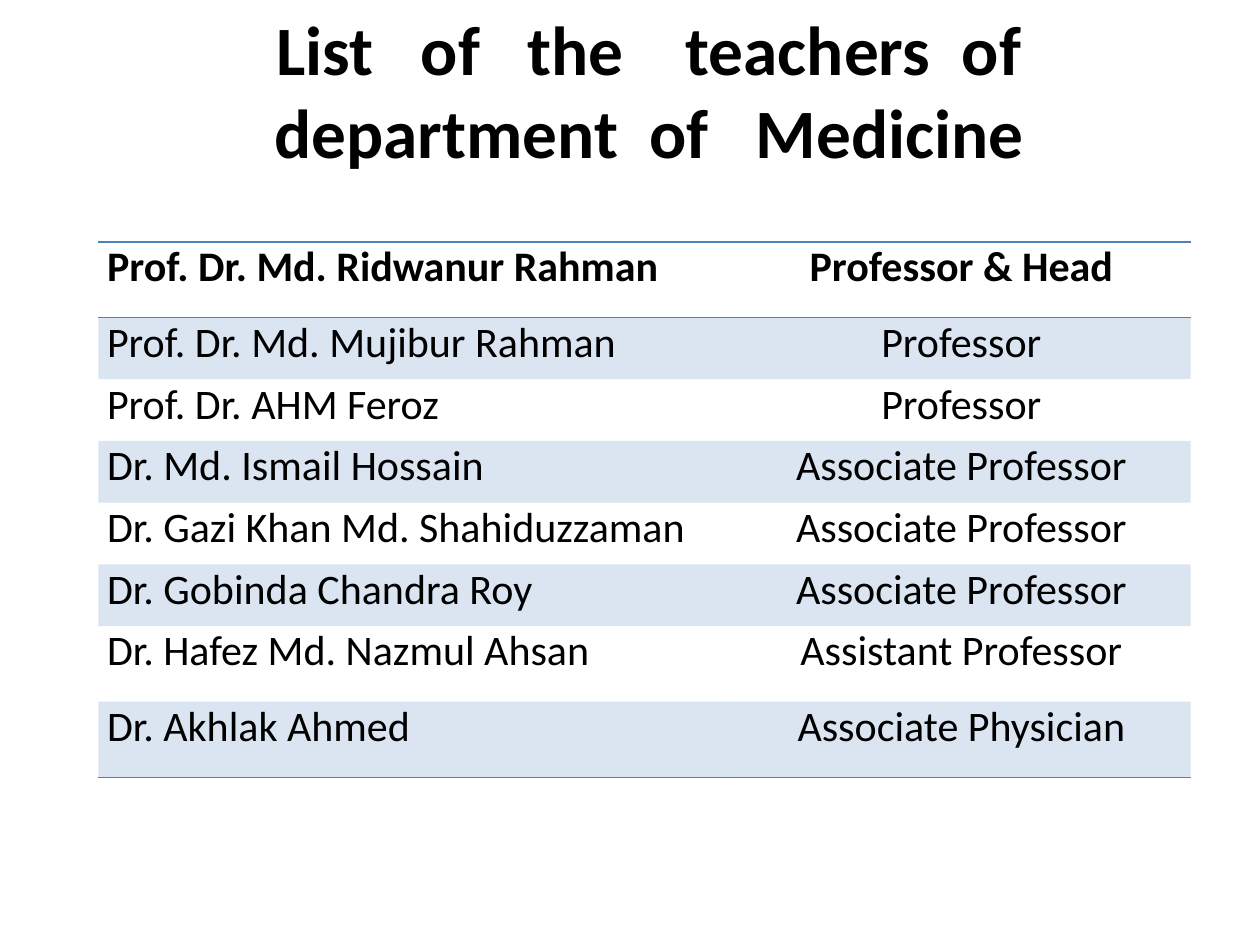
from lxml.etree import SubElement
from pptx import Presentation
from pptx.dml.color import RGBColor
from pptx.enum.text import MSO_ANCHOR, PP_ALIGN
from pptx.oxml import parse_xml
from pptx.oxml.ns import nsdecls, qn
from pptx.util import Inches, Pt

COLORS = {"ink": "000000", "blue": "4F81BD"}
PLAIN_GRID = "{2D5ABB26-0587-4C30-8999-92F81FD0307C}"

# Each title word with the number of space widths after it
TITLE = [("List", 3), ("of", 3), ("the", 4), ("teachers", 2), ("of", 4),
         ("department", 2), ("of", 3), ("Medicine", 0)]

STAFF = [
    ("Prof. Dr. Md. Ridwanur Rahman", "Professor & Head"),
    ("Prof. Dr. Md. Mujibur Rahman", "Professor"),
    ("Prof. Dr. AHM Feroz", "Professor"),
    ("Dr. Md. Ismail Hossain", "Associate Professor"),
    ("Dr. Gazi Khan Md. Shahiduzzaman", "Associate Professor"),
    ("Dr. Gobinda Chandra Roy", "Associate Professor"),
    ("Dr. Hafez Md. Nazmul Ahsan", "Assistant Professor"),
    ("Dr. Akhlak Ahmed", "Associate Physician"),
]
WIDTHS = [5.03, 3.64]
HEIGHTS = [0.6] + [0.49] * 5 + [0.6] * 2


class Deck:
    def __init__(self, slide):
        self.slide = slide
        self.face = "Calibri"

    def style(self, run, size, bold):
        values = {"name": self.face, "size": Pt(size), "bold": bold}
        for key, value in values.items():
            setattr(run.font, key, value)
        run.font.color.rgb = RGBColor.from_string(COLORS["ink"])

    def title(self, words, box, size):
        frame = self.slide.shapes.add_textbox(*map(Inches, box)).text_frame
        frame.word_wrap = True
        frame.vertical_anchor = MSO_ANCHOR.MIDDLE
        para = frame.paragraphs[0]
        para.alignment = PP_ALIGN.CENTER
        space = 0.226 * size  # width of one space in points
        for word, gap in words:
            run = para.add_run()
            run.text = word
            self.style(run, size, True)
            if gap:
                blank = para.add_run()
                blank.text = " "
                self.style(blank, size, True)
                extra = round((gap - 1) * space * 100)
                blank.font._element.set("spc", str(extra))

    def rule(self, cell, sides):
        props = cell._tc.get_or_add_tcPr()
        for index, side in enumerate(sides):
            line = parse_xml(
                f'<a:{side} {nsdecls("a")} w="12700"><a:solidFill>'
                f'<a:srgbClr val="{COLORS["blue"]}"/></a:solidFill></a:{side}>')
            props.insert(index, line)

    def tint(self, cell, percent):
        cell.fill.solid()
        cell.fill.fore_color.rgb = RGBColor.from_string(COLORS["blue"])
        color = cell._tc.tcPr.find(".//" + qn("a:srgbClr"))
        SubElement(color, qn("a:alpha")).set("val", str(percent * 1000))

    def cell(self, cell, text, align, bold):
        values = {"margin_left": 0.07, "margin_right": 0.07,
                  "margin_top": 0, "margin_bottom": 0}
        for key, value in values.items():
            setattr(cell, key, Inches(value))
        para = cell.text_frame.paragraphs[0]
        para.alignment = align
        run = para.add_run()
        run.text = text
        self.style(run, 24, bold)

    def table(self, rows, left, top):
        size = map(Inches, (left, top, sum(WIDTHS), sum(HEIGHTS)))
        grid = self.slide.shapes.add_table(len(rows), len(WIDTHS), *size).table
        grid._tbl.tblPr[0].text = PLAIN_GRID
        grid.horz_banding = False
        for col, width in zip(grid.columns, WIDTHS):
            col.width = Inches(width)
        for row, height in zip(grid.rows, HEIGHTS):
            row.height = Inches(height)

        aligns = (PP_ALIGN.LEFT, PP_ALIGN.CENTER)
        rules = {0: ("lnT", "lnB"), len(rows) - 1: ("lnB",)}
        for r, texts in enumerate(rows):
            for c, text in enumerate(texts):
                cell = grid.cell(r, c)
                self.cell(cell, text, aligns[c], r == 0)
                if r % 2:
                    self.tint(cell, 20)
                else:
                    cell.fill.background()
                self.rule(cell, rules.get(r, ()))


def main():
    prs = Presentation()
    prs.slide_width, prs.slide_height = Inches(10), Inches(7.5)
    deck = Deck(prs.slides.add_slide(prs.slide_layouts[6]))

    # Heading
    deck.title(TITLE, (0.94, 0, 8.42, 1.41), 39.6)

    # Staff list
    deck.table(STAFF, 0.78, 1.92)

    prs.save("out.pptx")


if __name__ == "__main__":
    main()
